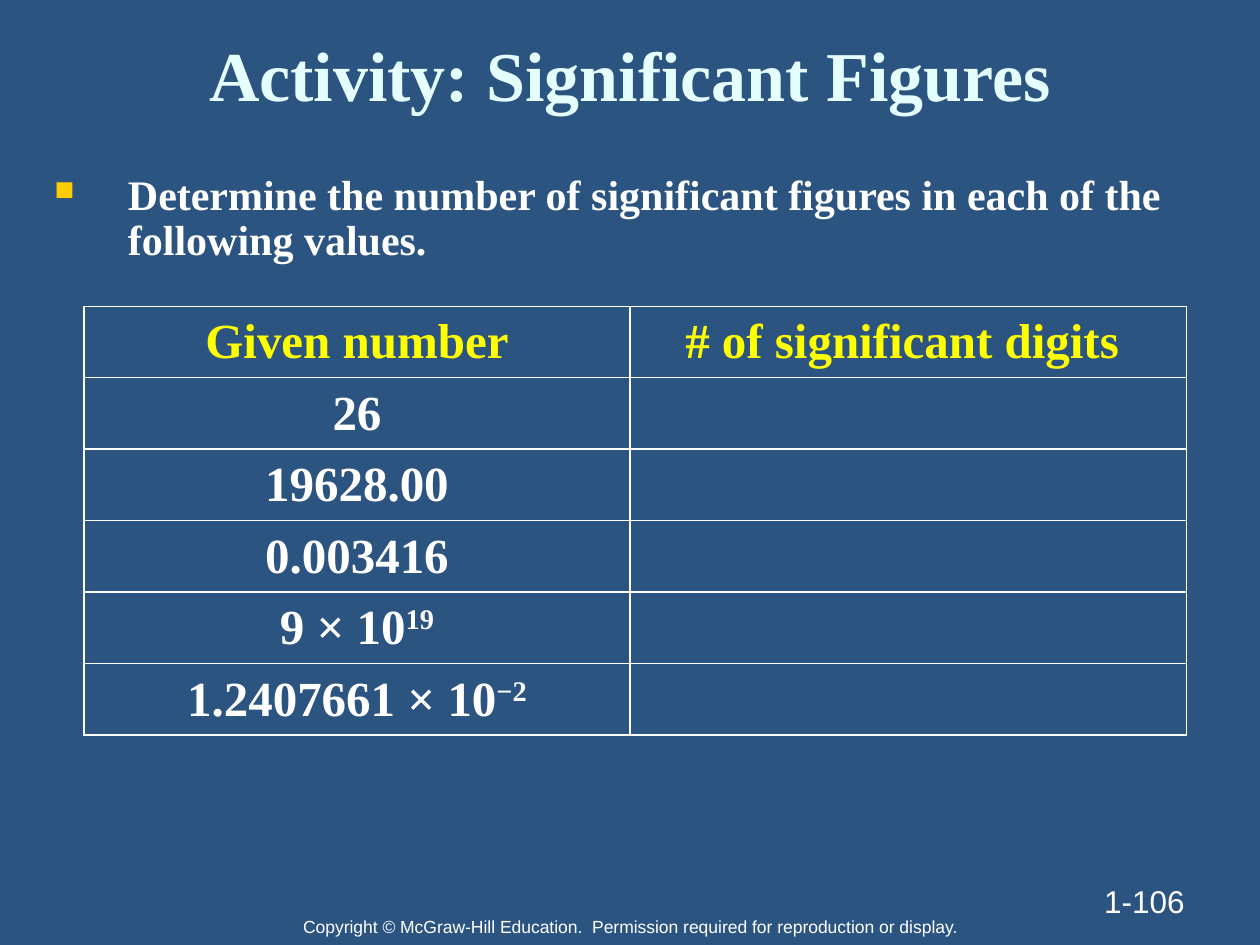
import pptx
import pptx.util
import pptx.dml.color
import pptx.enum.text
import pptx.oxml
import pptx.oxml.ns

Pt = pptx.util.Pt
ALIGN = pptx.enum.text.PP_ALIGN
ANCHOR = pptx.enum.text.MSO_ANCHOR
NS = pptx.oxml.ns.nsdecls("a")

SERIF = "Times New Roman"
WHITE = "FFFFFF"
TITLE = "Activity: Significant Figures"
TASK = "Determine the number of significant figures in each of the following values."
NOTE = "Copyright © McGraw-Hill Education.  Permission required for reproduction or display."
PAGE = "1-106"
HEADS = ["# of significant digits ", "Given number"][::-1]
VALUES = [("26", ""), ("19628.00", ""), ("0.003416", ""),
          ("9 × 10", "19"), ("1.2407661 × 10", "−2")]
COLS = [312, 318]
ROW = 40.8


def color(code):
    return pptx.dml.color.RGBColor.from_string(code)


def style(font, code, **values):
    font.color.rgb = color(code)
    for name, value in values.items():
        setattr(font, name, value)


def write(frame, text, code, align, anchor, **values):
    frame.word_wrap = True
    frame.vertical_anchor = anchor
    para = frame.paragraphs[0]
    para.alignment = align
    run = para.add_run()
    run.text = text
    style(run.font, code, **values)
    return para


def box(slide, place, *args, **values):
    frame = slide.shapes.add_textbox(*map(Pt, place)).text_frame
    return write(frame, *args, **values)


def border(cell):
    props = cell._tc.get_or_add_tcPr()
    for side in ("lnL", "lnR", "lnT", "lnB"):
        props.append(pptx.oxml.parse_xml(
            f'<a:{side} {NS} w="12700"><a:solidFill>'
            f'<a:srgbClr val="{WHITE}"/></a:solidFill></a:{side}>'))
    cell.fill.background()


def bullet(para):
    props = para._p.get_or_add_pPr()
    props.set("marL", str(Pt(42)))
    props.set("indent", str(-Pt(42)))
    for part in ('buClr %s><a:srgbClr val="FFCC00"/></a:buClr>',
                 'buSzPct %s val="65000"/>',
                 'buChar %s char="■"/>'):
        props.append(pptx.oxml.parse_xml("<a:" + part % NS))
    para.line_spacing = 0.9


def grid(slide):
    rows = [(head, "", "FFFF00") for head in HEADS[:1]]
    rows += [(base, power, WHITE) for base, power in VALUES]
    frame = slide.shapes.add_table(len(rows), len(COLS), Pt(48), Pt(175),
                                   Pt(sum(COLS)), Pt(ROW * len(rows)))
    table = frame.table
    table.first_row = table.horz_banding = False
    for col, width in zip(table.columns, COLS):
        col.width = Pt(width)
    for row in table.rows:
        row.height = Pt(ROW)
    for cell in table.iter_cells():
        border(cell)
    look = dict(size=Pt(28), name=SERIF, bold=True)

    def fill(cell, text, code):
        cell.vertical_anchor = ANCHOR.MIDDLE
        para = cell.text_frame.paragraphs[0]
        para.alignment = ALIGN.CENTER
        run = para.add_run()
        run.text = text
        style(run.font, code, **look)
        return para

    fill(table.cell(0, 1), HEADS[1], "FFFF00")
    for i, (base, power, code) in enumerate(rows):
        para = fill(table.cell(i, 0), base, code)
        if power:
            run = para.add_run()
            run.text = power
            style(run.font, code, **look)
            run.font._element.set("baseline", "30000")


def main():
    deck = pptx.Presentation()
    deck.slide_width, deck.slide_height = Pt(720), Pt(540)
    slide = deck.slides.add_slide(deck.slide_layouts[5])
    back = slide.background.fill
    back.solid()
    back.fore_color.rgb = color("2B5481")

    title = slide.shapes.title
    title.left, title.top, title.width, title.height = map(Pt, (12, 12, 696, 60))
    write(title.text_frame, TITLE, "E5FFFF", ALIGN.CENTER, ANCHOR.MIDDLE,
          size=Pt(40), name=SERIF, bold=True)

    box(slide, (0, 520, 720, 20), NOTE, WHITE, ALIGN.CENTER, ANCHOR.TOP,
        size=Pt(10), name="Arial")
    box(slide, (516, 492, 168, 37), PAGE, WHITE, ALIGN.RIGHT, ANCHOR.BOTTOM,
        size=Pt(18), name="Arial")
    grid(slide)
    bullet(box(slide, (24, 96, 660, 54), TASK, WHITE, ALIGN.LEFT, ANCHOR.TOP,
               size=Pt(24), name=SERIF, bold=True))
    deck.save("out.pptx")


if __name__ == "__main__":
    main()
